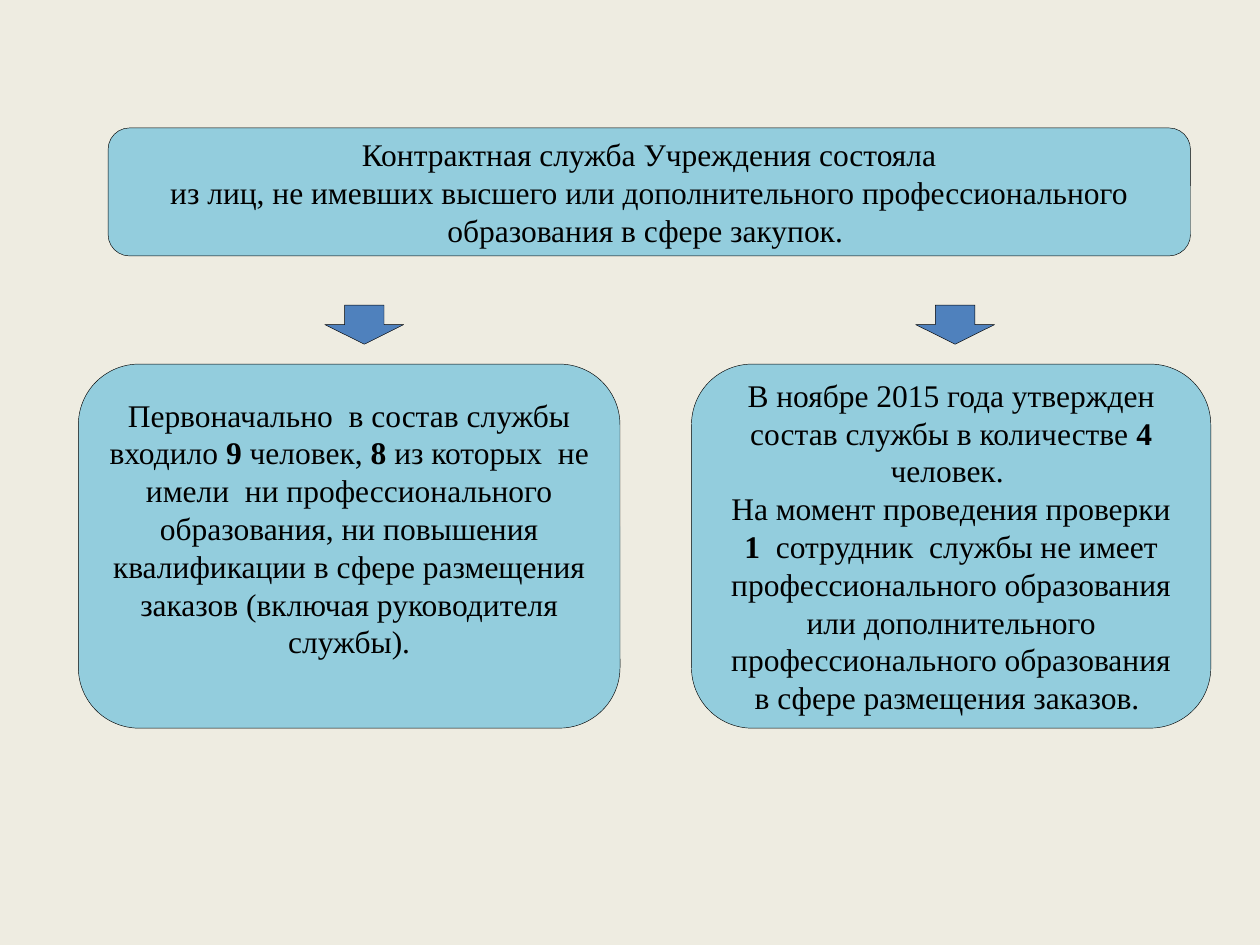
from pptx import Presentation
from pptx.dml.color import RGBColor
from pptx.enum import shapes, text
from pptx.util import Cm, Pt

COLORS = {"background": "EEECE1", "box": "93CDDD", "arrow": "4F81BD", "ink": "000000"}
FONT = {"name": "Times New Roman", "size": Pt(18)}

deck = Presentation()
deck.slide_width, deck.slide_height = Cm(25.4), Cm(19.05)
page = deck.slides.add_slide(deck.slide_layouts[6])
page.background.fill.solid()
page.background.fill.fore_color.rgb = RGBColor.from_string(COLORS["background"])


def add_outlined(kind, place, color):
    """Add a preset shape with a plain fill and a hairline outline."""
    shape = page.shapes.add_shape(kind, *(Cm(length) for length in place))
    shape.shadow.inherit = False
    shape.fill.solid()
    shape.fill.fore_color.rgb = RGBColor.from_string(COLORS[color])
    shape.line.color.rgb = RGBColor.from_string(COLORS["ink"])
    shape.line.width = Pt(0.25)
    return shape


# Each box: place, bottom inset, paragraphs; odd pieces of a paragraph are bold.
boxes = [
    ((2.18, 2.58, 21.82, 2.58), 0.13, [
        ["Контрактная служба Учреждения состояла"],
        ["из лиц, не имевших высшего или дополнительного профессионального "
         "образования в сфере закупок. "],
    ]),
    ((1.58, 7.34, 10.92, 7.34), 0.86, [
        ["Первоначально  в состав службы входило ", "9", " человек, ", "8",
         " из которых  не имели  ни профессионального образования, ни повышения "
         "квалификации в сфере размещения заказов (включая руководителя службы)."],
    ]),
    ((13.94, 7.34, 10.47, 7.34), 0.13, [
        ["В ноябре 2015 года утвержден состав службы в количестве", " 4 ", "человек. "],
        ["На момент проведения проверки ", "1",
         "  сотрудник  службы не имеет профессионального образования или "
         "дополнительного профессионального образования в сфере размещения заказов. "],
    ]),
]

for place, bottom, paragraphs in boxes:
    box = add_outlined(shapes.MSO_SHAPE.ROUNDED_RECTANGLE, place, "box")
    frame = box.text_frame
    frame_format = {
        "word_wrap": True,
        "vertical_anchor": text.MSO_ANCHOR.MIDDLE,
        "margin_bottom": Cm(bottom),
    }
    for name, value in frame_format.items():
        setattr(frame, name, value)
    for number, pieces in enumerate(paragraphs):
        para = frame.add_paragraph() if number else frame.paragraphs[0]
        para.alignment = text.PP_ALIGN.CENTER
        for position, piece in enumerate(pieces):
            span = para.add_run()
            span.text = piece
            for name, value in FONT.items():
                setattr(span.font, name, value)
            span.font.bold = position % 2 == 1
            span.font.color.rgb = RGBColor.from_string(COLORS["ink"])

for left in (6.55, 18.46):
    add_outlined(shapes.MSO_SHAPE.DOWN_ARROW, (left, 6.15, 1.59, 0.79), "arrow")

deck.save("out.pptx")
